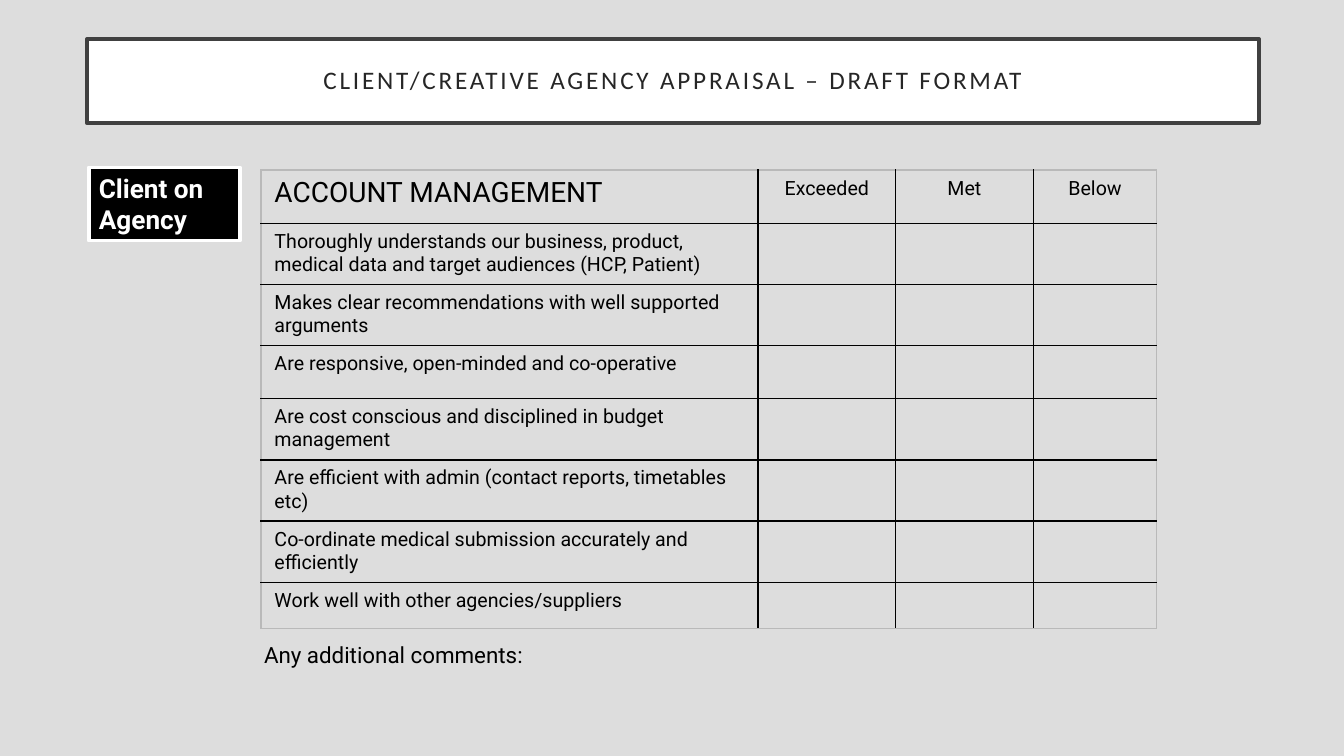
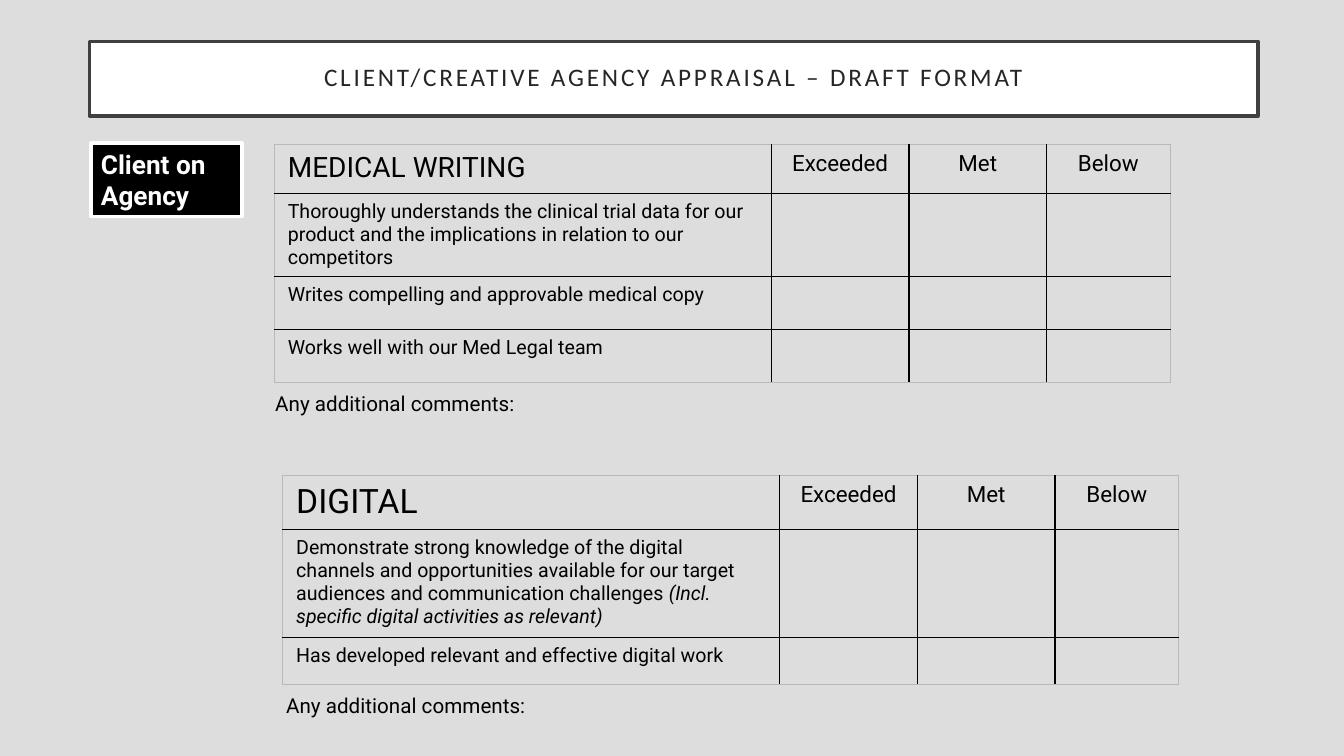
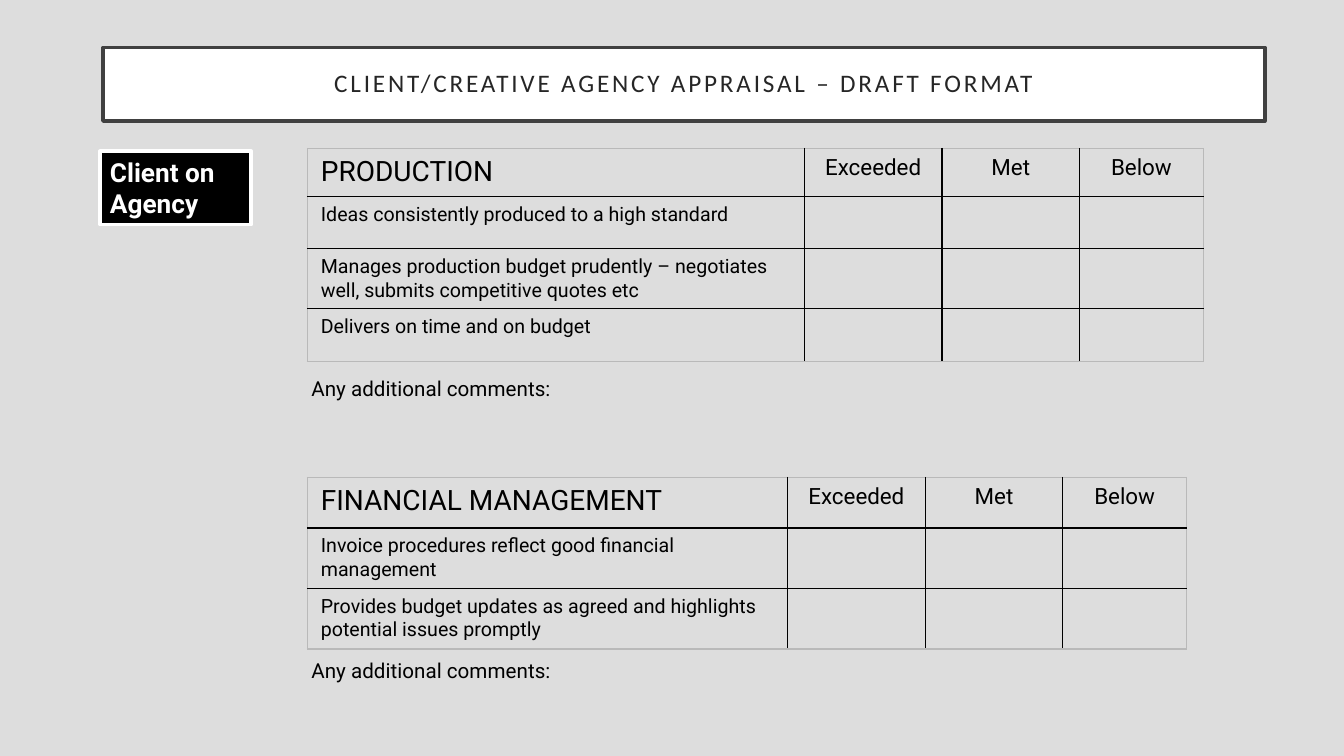
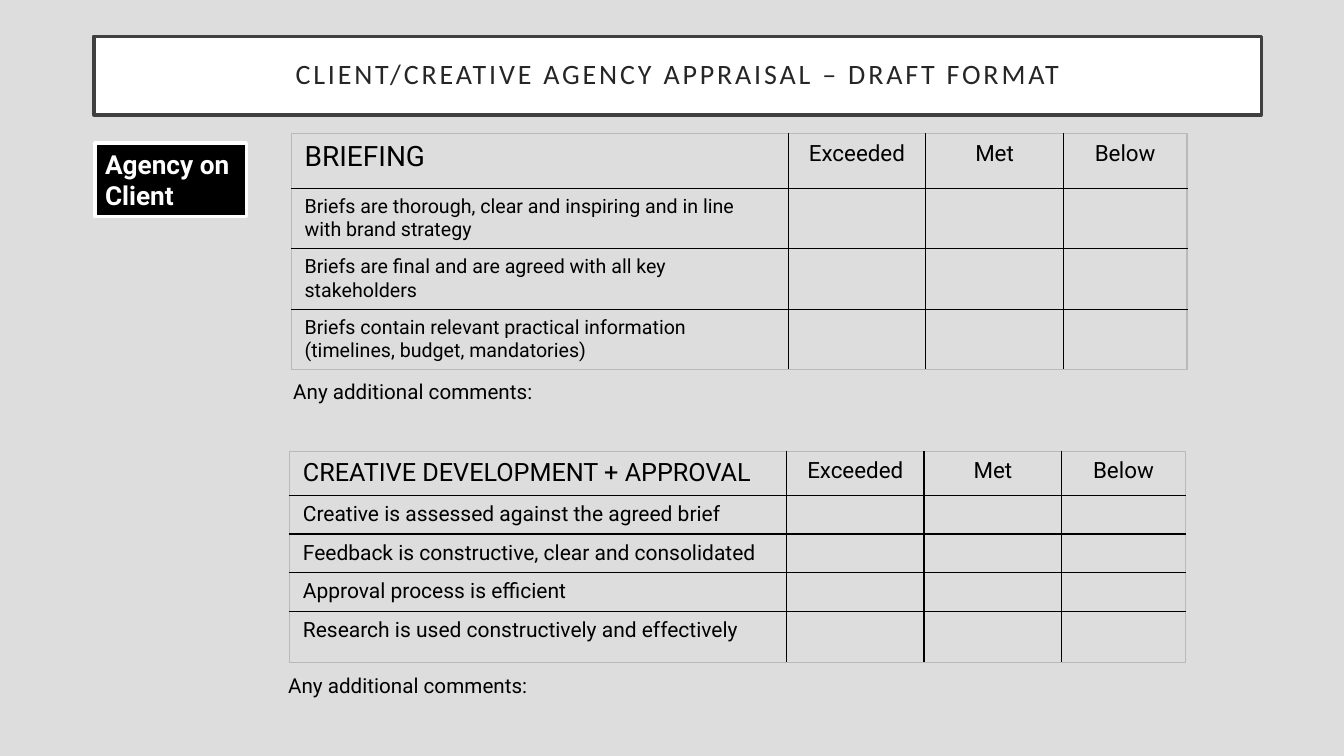
from lxml import etree
from pptx import Presentation
from pptx.dml.color import RGBColor
from pptx.enum import shapes, text
from pptx.oxml import ns
from pptx.util import Pt

BACKGROUND = RGBColor(0xDD, 0xDD, 0xDD)
WHITE = RGBColor(0xFF, 0xFF, 0xFF)
BLACK = RGBColor(0x00, 0x00, 0x00)
TITLE_LINE = RGBColor(0x40, 0x40, 0x40)
TITLE_TEXT = RGBColor(0x26, 0x26, 0x26)
TABLE_EDGE = RGBColor(0xB9, 0xB9, 0xB9)

TITLE_FONT = "Calibri"
BODY_FONT = "Roboto"
TITLE = "CLIENT/CREATIVE AGENCY APPRAISAL – DRAFT FORMAT"
COMMENTS = "Any additional comments:"
RATINGS = ("Exceeded", "Met", "Below")
RATING_WIDTHS = (98.3, 98.3, 88.3)


def add_span(para, words, size, color=BLACK, font=BODY_FONT, bold=False, italic=False):
    span = para.add_run()
    span.text = words
    span.font.name = font
    span.font.size = Pt(size)
    span.font.color.rgb = color
    span.font.bold = bold
    span.font.italic = italic
    return span


def style_box(box, fill, line):
    box.shadow.inherit = False
    box.fill.solid()
    box.fill.fore_color.rgb = fill
    box.line.color.rgb = line
    box.line.width = Pt(2.5)


def add_page(deck, left, top, width, height, size=18):
    """Add a slide whose title sits in a framed white band."""
    page = deck.slides.add_slide(deck.slide_layouts[5])
    title = page.shapes.title
    title.left, title.top, title.width, title.height = map(Pt, (left, top, width, height))
    title.fill.solid()
    title.fill.fore_color.rgb = WHITE
    title.line.color.rgb = TITLE_LINE
    title.line.width = Pt(2.5)
    frame = title.text_frame
    frame.word_wrap = True
    frame.auto_size = text.MSO_AUTO_SIZE.NONE
    frame.vertical_anchor = text.MSO_ANCHOR.MIDDLE
    frame.margin_left = frame.margin_right = Pt(14.4)
    frame.margin_top = frame.margin_bottom = Pt(14.4)
    para = frame.paragraphs[0]
    para.alignment = text.PP_ALIGN.CENTER
    para.line_spacing = 0.9
    span = add_span(para, TITLE, size, TITLE_TEXT, TITLE_FONT)
    span._r.get_or_add_rPr().set("spc", "200")
    return page


def add_direction(page, left, top, words):
    """Add the black label that says who appraises whom."""
    box = page.shapes.add_shape(shapes.MSO_SHAPE.RECTANGLE, Pt(left), Pt(top), Pt(108), Pt(52.5))
    style_box(box, BLACK, WHITE)
    frame = box.text_frame
    frame.word_wrap = True
    frame.vertical_anchor = text.MSO_ANCHOR.TOP
    para = frame.paragraphs[0]
    para.alignment = text.PP_ALIGN.LEFT
    add_span(para, words, 18.7, WHITE, bold=True)


def add_comments(page, left, top, size=14.7):
    box = page.shapes.add_textbox(Pt(left), Pt(top), Pt(264), Pt(25.5))
    box.text_frame.word_wrap = True
    add_span(box.text_frame.paragraphs[0], COMMENTS, size)


def set_border(cell, side, color):
    line = etree.SubElement(cell._tc.get_or_add_tcPr(), ns.qn("a:ln" + side), w=str(Pt(1)))
    fill = etree.SubElement(line, ns.qn("a:solidFill"))
    etree.SubElement(fill, ns.qn("a:srgbClr"), val=str(color))


def format_cell(cell, outer_sides):
    for side in "LRTB":
        set_border(cell, side, TABLE_EDGE if side in outer_sides else BLACK)
    cell.fill.background()
    cell.margin_left = cell.margin_right = Pt(9.6)
    cell.margin_top = cell.margin_bottom = Pt(4.8)


def add_scorecard(page, left, top, heights, heading, criteria, heading_size=20,
                  rating_size=16, size=14, first_width=355):
    """Add a rating table; a criterion is a text, or a plain and an italic text."""
    widths = (first_width,) + RATING_WIDTHS
    table = page.shapes.add_table(len(heights), len(widths), Pt(left), Pt(top),
                                  Pt(sum(widths)), Pt(sum(heights))).table
    table.first_row = table.horz_banding = False
    for column, width in zip(table.columns, widths):
        column.width = Pt(width)
    last_row, last_column = len(heights) - 1, len(widths) - 1
    for r, height in enumerate(heights):
        table.rows[r].height = Pt(height)
        for c in range(len(widths)):
            edges = (("L", c == 0), ("R", c == last_column), ("T", r == 0), ("B", r == last_row))
            cell = table.cell(r, c)
            format_cell(cell, [side for side, outer in edges if outer])
            para = cell.text_frame.paragraphs[0]
            if r and c:
                # An empty cell must not force its row taller than the text does
                etree.SubElement(para._p, ns.qn("a:endParaRPr"), sz=str(size * 100))
            elif c:
                para.alignment = text.PP_ALIGN.CENTER
                add_span(para, RATINGS[c - 1], rating_size)
            elif r:
                criterion = criteria[r - 1]
                parts = (criterion,) if isinstance(criterion, str) else criterion
                for i, words in enumerate(parts):
                    add_span(para, words, size, italic=i == 1)
            else:
                add_span(para, heading, heading_size)


def add_account_page(deck):
    page = add_page(deck, 62, 28, 837.5, 60)
    add_scorecard(page, 186.5, 121.5, (38, 43.7, 43.7, 38, 43.7, 43.7, 43.7, 33), "ACCOUNT MANAGEMENT", (
        "Thoroughly understands our business, product, medical data and target audiences (HCP, Patient)",
        "Makes clear recommendations with well supported arguments",
        "Are responsive, open-minded and co-operative",
        "Are cost conscious and disciplined in budget management",
        "Are efficient with admin (contact reports, timetables etc)",
        "Co-ordinate medical submission accurately and efficiently",
        "Work well with other agencies/suppliers",
    ), rating_size=14)
    add_comments(page, 181.5, 454.5, 16)
    add_direction(page, 63.5, 119.5, "Client on Agency")


def add_writing_page(deck):
    page = add_page(deck, 64, 29.5, 834.5, 53.5)
    add_scorecard(page, 196, 103.3, (35, 59.3, 37.8, 37.8), "MEDICAL WRITING", (
        "Thoroughly understands the clinical trial data for our product and the implications "
        "in relation to our competitors",
        "Writes compelling and approvable medical copy",
        "Works well with our Med Legal team",
    ))
    add_comments(page, 189.5, 276)
    add_direction(page, 65, 102.2, "Client on Agency")
    add_scorecard(page, 202, 339.7, (38.4, 77.2, 33.4), "DIGITAL", (
        ("Demonstrate strong knowledge of the digital channels and opportunities available "
         "for our target audiences and communication challenges ",
         "(Incl. specific digital activities as relevant)"),
        "Has developed relevant and effective digital work",
    ), heading_size=24)
    add_comments(page, 197.3, 491.7)


def add_production_page(deck):
    page = add_page(deck, 73.5, 34, 830, 52.5)
    add_scorecard(page, 219.6, 106, (34.3, 37.5, 42.5, 37.8), "PRODUCTION", (
        "Ideas consistently produced to a high standard",
        "Manages production budget prudently – negotiates well, submits competitive quotes etc",
        "Delivers on time and on budget",
    ))
    add_comments(page, 215.3, 265)
    add_direction(page, 71.5, 108, "Client on Agency")
    add_scorecard(page, 219.6, 341, (36.1, 43.2, 43.2), "FINANCIAL MANAGEMENT", (
        "Invoice procedures reflect good financial management",
        "Provides budget updates as agreed and highlights potential issues promptly",
    ), first_width=343)
    add_comments(page, 215.3, 466.7)


def add_briefing_page(deck):
    page = add_page(deck, 67, 26, 834, 56, 20)
    add_scorecard(page, 208, 95.6, (39, 43.2, 43.2, 43.2), "BRIEFING", (
        "Briefs are thorough, clear and inspiring and in line with brand strategy",
        "Briefs are final and are agreed with all key stakeholders",
        "Briefs contain relevant practical information (timelines, budget, mandatories)",
    ))
    add_comments(page, 202.3, 267.2)
    add_direction(page, 68, 102.2, "Agency on Client")
    add_scorecard(page, 206.8, 322.3, (31.4, 27.7, 27.7, 27.7, 36.5), "CREATIVE DEVELOPMENT + APPROVAL", (
        "Creative is assessed against the agreed brief",
        "Feedback is constructive, clear and consolidated",
        "Approval process is efficient",
        "Research is used constructively and effectively",
    ), heading_size=18, size=15)
    add_comments(page, 198.7, 477.4)


def main():
    deck = Presentation()
    deck.slide_width, deck.slide_height = Pt(960), Pt(540)
    background = deck.slide_master.background.fill
    background.solid()
    background.fore_color.rgb = BACKGROUND
    add_account_page(deck)
    add_writing_page(deck)
    add_production_page(deck)
    add_briefing_page(deck)
    deck.save("out.pptx")


if __name__ == "__main__":
    main()
